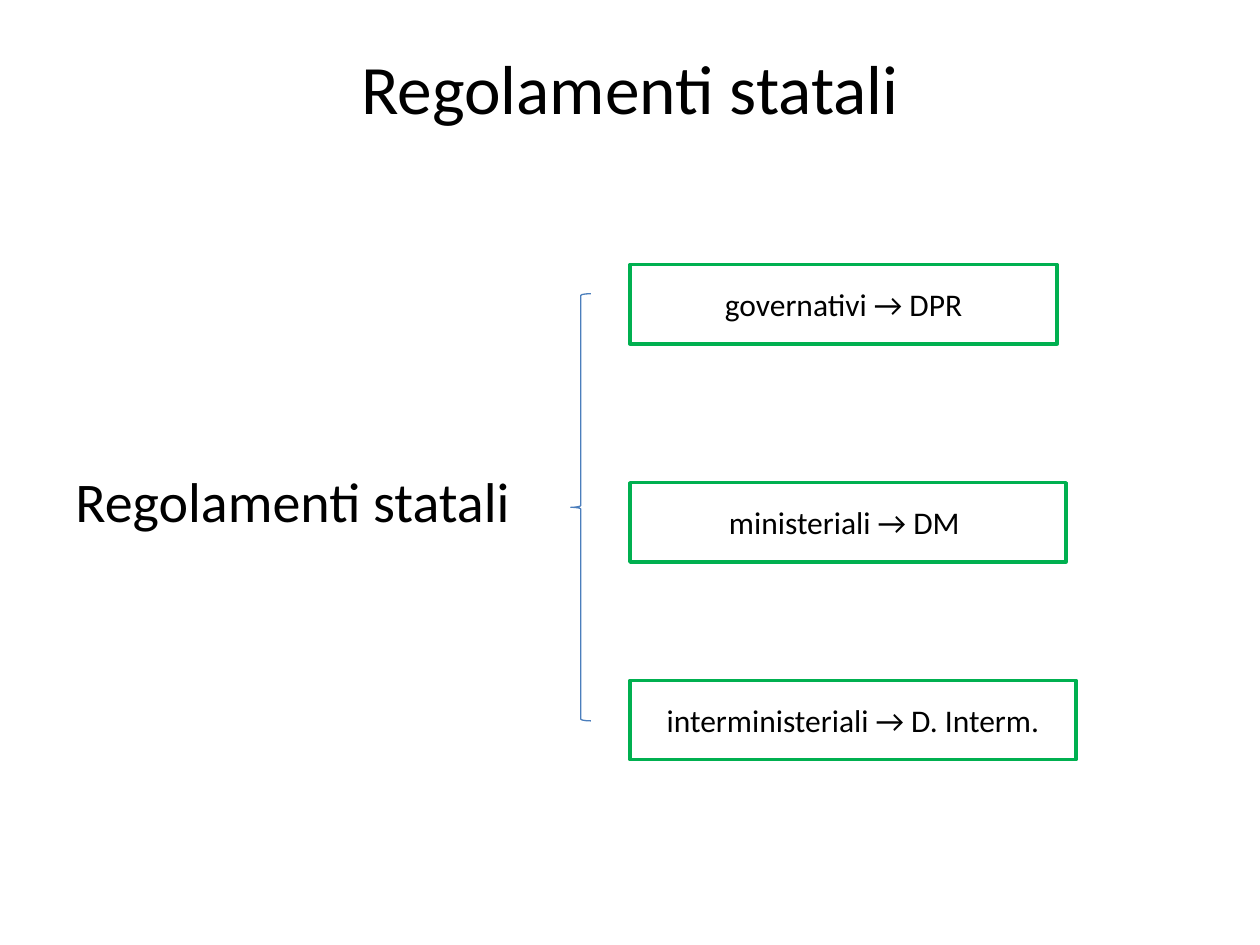
from pptx import Presentation
from pptx.dml.color import RGBColor
from pptx.enum.shapes import MSO_SHAPE as Shape
from pptx.enum.text import MSO_ANCHOR as Anchor, PP_ALIGN as Align
from pptx.util import Inches, Pt

BLACK = RGBColor(0x00, 0x00, 0x00)
WHITE = RGBColor(0xFF, 0xFF, 0xFF)
GREEN = RGBColor(0x00, 0xB0, 0x50)
BLUE = RGBColor(0x4B, 0x7E, 0xBC)

presentation = Presentation()
presentation.slide_width = Inches(10)
presentation.slide_height = Inches(7.5)
COLUMN = presentation.slide_width / 20
ROW = presentation.slide_height / 25
slide = presentation.slides.add_slide(presentation.slide_layouts[6])


def place(left, top, width, height):
    return [round(length) for length in (left * COLUMN, top * ROW, width * COLUMN, height * ROW)]


def write(shape, text, size, alignment):
    text_frame = shape.text_frame
    text_frame.word_wrap = True
    text_frame.vertical_anchor = Anchor.MIDDLE
    text_frame.text = text
    paragraph = text_frame.paragraphs[0]
    paragraph.alignment = alignment
    font = paragraph.runs[0].font
    font.name = "Calibri"
    font.size = Pt(size)
    font.color.rgb = BLACK


title = slide.shapes.add_textbox(*place(1, 1, 18, 2.57))
write(title, "Regolamenti statali", 39.6, Align.CENTER)

root_label = slide.shapes.add_textbox(*place(1, 12, 8, 2.45))
write(root_label, "Regolamenti statali", 32, Align.LEFT)

brace = slide.shapes.add_shape(Shape.LEFT_BRACE, *place(9.06, 7.77, 0.32, 11.3))
brace.shadow.inherit = False
brace.fill.background()
brace.line.color.rgb = BLUE
brace.line.width = Pt(0.75)

branches = [
    ("governativi → DPR", 7, 6.78),
    ("ministeriali → DM ", 12.77, 6.92),
    ("interministeriali → D. Interm.", 18, 7.08),
]
for text, top, width in branches:
    box = slide.shapes.add_shape(Shape.RECTANGLE, *place(10, top, width, 2.1))
    box.shadow.inherit = False
    box.fill.solid()
    box.fill.fore_color.rgb = WHITE
    box.line.color.rgb = GREEN
    box.line.width = Pt(2)
    write(box, text, 18, Align.CENTER)

presentation.save("out.pptx")
